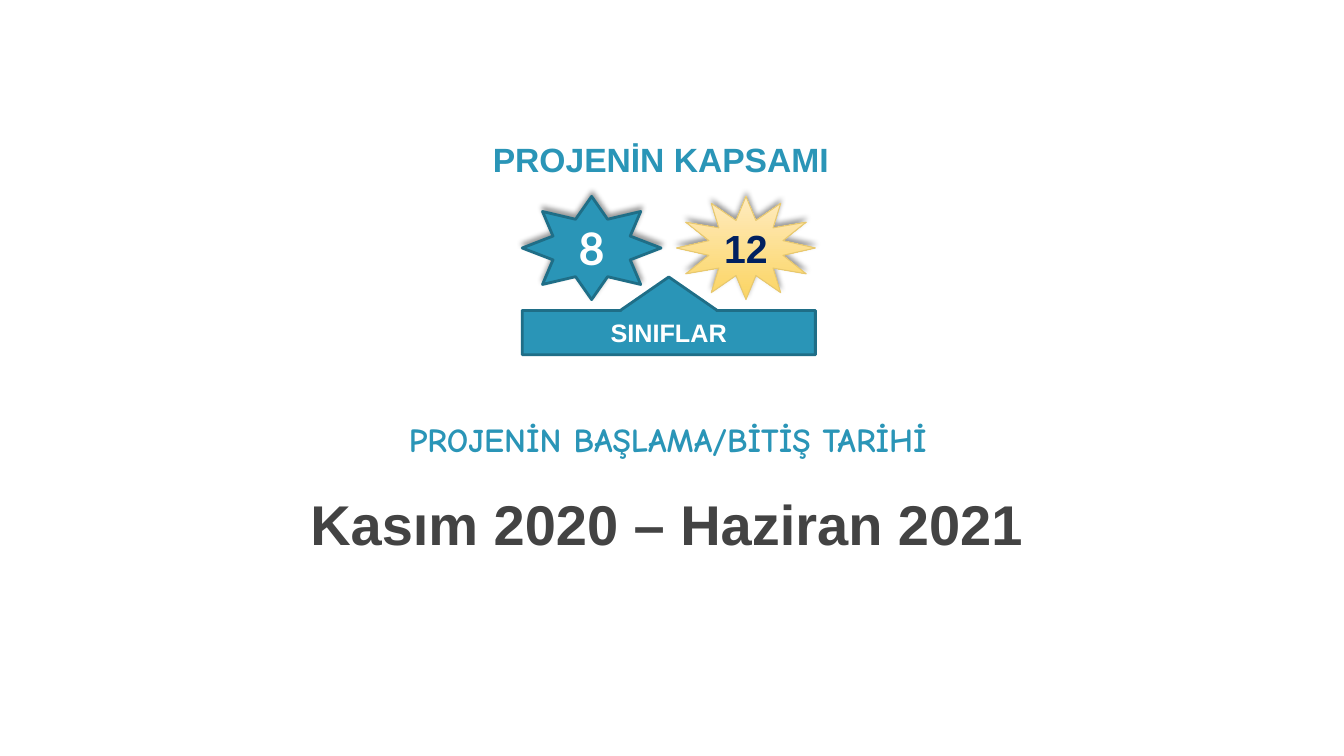
"""Builds the slide on the scope and dates of the project."""
from lxml.etree import SubElement
from pptx import Presentation
from pptx.dml.color import RGBColor
from pptx.enum.shapes import MSO_SHAPE
from pptx.enum.text import MSO_ANCHOR, MSO_AUTO_SIZE, PP_ALIGN
from pptx.oxml import parse_xml
from pptx.oxml.ns import nsdecls, qn
from pptx.util import Cm, Pt

TEAL, DARK_TEAL, WHITE = "2A95B7", "1F6E87", "FFFFFF"


def rgb(value):
    return RGBColor.from_string(value)


class ScopeSlide:
    font = "Arial"

    def __init__(self, deck):
        self.slide = deck.slides.add_slide(deck.slide_layouts[6])
        self.classes = self.slide.shapes.add_group_shape()

    def label(self, frame, wording, size, color, align, font=None):
        paragraph = frame.paragraphs[0]
        paragraph.text = wording
        paragraph.alignment = align
        style = paragraph.font
        style.name = font or self.font
        style.size, style.bold = Pt(size), True
        style.color.rgb = rgb(color)
        return paragraph

    def text(self, place, wording, size, color, align=PP_ALIGN.LEFT, font=None,
             inset=None, wrap=True, grow=True):
        frame = self.slide.shapes.add_textbox(*map(Cm, place)).text_frame
        frame.word_wrap = wrap
        if grow:
            frame.auto_size = MSO_AUTO_SIZE.SHAPE_TO_FIT_TEXT
        if inset is not None:
            frame.margin_top = frame.margin_bottom = Cm(inset)
            frame.margin_left = frame.margin_right = Cm(inset)
        return self.label(frame, wording, size, color, align, font)

    def outline(self, paragraph, color, width):
        border = parse_xml(
            f'<a:ln {nsdecls("a")} w="{Pt(width)}"><a:solidFill>'
            f'<a:srgbClr val="{color}"/></a:solidFill></a:ln>')
        for run in paragraph.runs:
            run._r.get_or_add_rPr().insert(0, border)

    def shape(self, kind, place, adjustments, fill, line, width,
              wording, size, color=WHITE, font=None):
        shape = self.classes.shapes.add_shape(kind, *map(Cm, place))
        for index, value in enumerate(adjustments):
            shape.adjustments[index] = value
        if len(fill) == 1:
            shape.fill.solid()
            shape.fill.fore_color.rgb = rgb(fill[0])
        else:
            shape.fill.gradient()
            shape.fill.gradient_angle = 90
            for stop, shade in zip(shape.fill.gradient_stops, fill):
                stop.color.rgb = rgb(shade)
        shape.line.color.rgb = rgb(line)
        shape.line.width = Pt(width)
        shape.shadow.inherit = False
        shape.text_frame.vertical_anchor = MSO_ANCHOR.MIDDLE
        self.label(shape.text_frame, wording, size, color, PP_ALIGN.CENTER, font)
        return shape

    def star(self, kind, left, *look, **text_style):
        star = self.shape(kind, (left, 4.95, 3.5, 2.6), *look, **text_style)
        frame = star.text_frame
        frame.margin_left = frame.margin_right = Cm(0.1)
        frame.margin_top = frame.margin_bottom = 0
        effects = star._element.spPr.find(qn("a:effectLst"))
        shadow = SubElement(effects, qn("a:outerShdw"), blurRad=str(Pt(4)),
                            dist=str(Pt(3)), dir="16200000", rotWithShape="0")
        black = SubElement(shadow, qn("a:srgbClr"), val="000000")
        SubElement(black, qn("a:alpha"), val="40000")


def main():
    deck = Presentation()
    deck.slide_width, deck.slide_height = Cm(33.87), Cm(19.05)
    page = ScopeSlide(deck)

    page.star(MSO_SHAPE.STAR_8_POINT, 13.16, [0.301], [TEAL], DARK_TEAL, 2,
              "8", 32, font="Lato")
    page.star(MSO_SHAPE.STAR_12_POINT, 17.05, [0.276], ["FBD462", "FFEBBF"],
              "E7C86F", 0.75, "12", 28, color="002060")
    page.shape(MSO_SHAPE.UP_ARROW_CALLOUT, (13.16, 6.98, 7.39, 1.96),
               [1.222, 0.623, 0.431, 0.75], [TEAL], DARK_TEAL, 2, "SINIFLAR", 18)

    page.text((12.17, 3.38, 10.11, 1.28), "PROJENİN KAPSAMI", 24, TEAL)
    page.text((3.83, 10.31, 26, 2.77), "PROJENİN BAŞLAMA/BİTİŞ TARİHİ", 24, TEAL,
              PP_ALIGN.CENTER, "Comic Neue", inset=0.25, grow=False)
    dates = page.text((7.57, 12.22, 18.67, 1.96), "Kasım 2020 – Haziran 2021", 40,
                      "434343", PP_ALIGN.JUSTIFY, wrap=False)
    page.outline(dates, WHITE, 0.75)
    deck.save("out.pptx")


if __name__ == "__main__":
    main()
